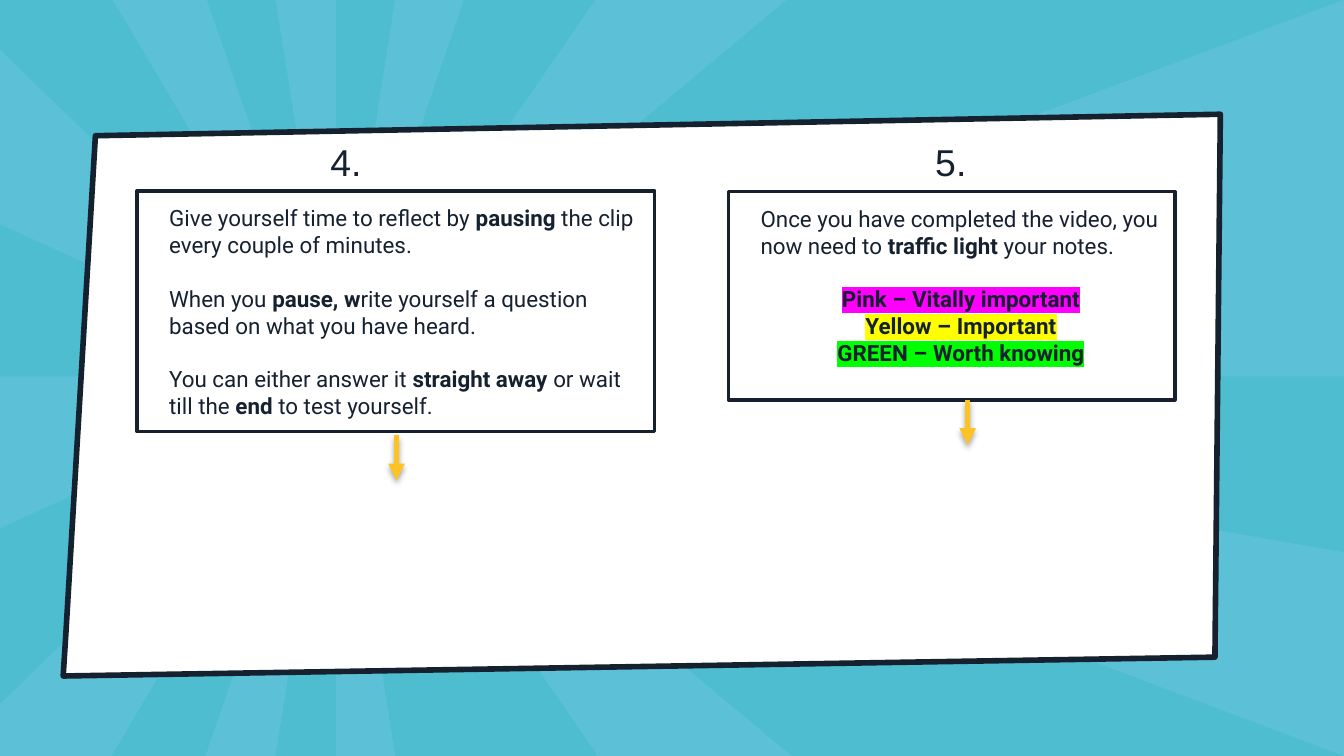
from lxml import etree
from pptx import Presentation
from pptx.dml.color import RGBColor
from pptx.enum.shapes import MSO_CONNECTOR, MSO_SHAPE
from pptx.enum.text import MSO_ANCHOR, PP_ALIGN
from pptx.oxml import parse_xml
from pptx.oxml.ns import nsdecls, qn
from pptx.util import Inches, Pt

RECTANGLE, STRAIGHT = MSO_SHAPE.RECTANGLE, MSO_CONNECTOR.STRAIGHT
LEFT, CENTER, TOP = PP_ALIGN.LEFT, PP_ALIGN.CENTER, MSO_ANCHOR.TOP

THEME = {
    "background": "4EBDCF", "ray": "5CC1D6", "panel": "FFFFFF",
    "ink": "162130", "arrow": "FDC324",
    "pink": "FF00FF", "yellow": "FFFF00", "green": "00FF00",
    "body": {"name": "Roboto", "size": Pt(12)},
    "number": {"name": "Arial", "size": Pt(20)},
    "gap": Pt(14.4), "panel_line": Pt(3), "box_line": Pt(2), "arrow_line": Pt(3),
}

presentation = Presentation()
presentation.slide_width = Inches(10)
presentation.slide_height = presentation.slide_width * 9 // 16
slide = presentation.slides.add_slide(presentation.slide_layouts[6])
slide.background.fill.solid()
slide.background.fill.fore_color.rgb = RGBColor.from_string(THEME["background"])

column = presentation.slide_width / 100
BOTTOM = presentation.slide_height / column
HUB = (25, 28)


def add_outline(points, color):
    corners = [(round(x * column), round(y * column)) for x, y in points]
    builder = slide.shapes.build_freeform(*corners[0], scale=1)
    builder.add_line_segments(corners[1:], close=True)
    shape = builder.convert_to_shape()
    shape.shadow.inherit = False
    shape.fill.solid()
    shape.fill.fore_color.rgb = RGBColor.from_string(color)
    shape.line.fill.background()
    return shape


def write_text(shape, paragraphs, style):
    frame = shape.text_frame
    frame_format = {"word_wrap": True, "vertical_anchor": TOP}
    for side in ("left", "right", "top", "bottom"):
        frame_format[f"margin_{side}"] = round(column)
    for name, value in frame_format.items():
        setattr(frame, name, value)
    for index, (text, align, gap, highlight) in enumerate(paragraphs):
        paragraph = frame.add_paragraph() if index else frame.paragraphs[0]
        paragraph.alignment = align
        paragraph.space_before = gap
        paragraph._p.get_or_add_pPr().set("marL", str(round(1.4 * column)))
        for part, words in enumerate(text.split("**")):
            if not words:
                continue
            run = paragraph.add_run()
            run.text = words
            for name, value in {**style, "bold": part % 2 == 1}.items():
                setattr(run.font, name, value)
            run.font.color.rgb = RGBColor.from_string(THEME["ink"])
            if highlight:
                run._r.rPr.find(qn("a:solidFill")).addnext(parse_xml(
                    f'<a:highlight {nsdecls("a")}><a:srgbClr val="{THEME[highlight]}"/></a:highlight>'))


rays = [
    [(0, 39.3), (0, 28)],
    [(0, 3.7), (0, 16.7)],
    [(8.4, 0), (15.4, 0)],
    [(20.5, 0), (25, 0)],
    [(29.4, 0), (34.5, 0)],
    [(44.3, 0), (58.5, 0)],
    [(100, 0), (100, 28)],
    [(100, 41.1), (100, BOTTOM)],
    [(58.9, BOTTOM), (44.5, BOTTOM)],
    [(29.4, BOTTOM), (25, BOTTOM)],
    [(20.5, BOTTOM), (15.3, BOTTOM)],
    [(8.3, BOTTOM), (0, BOTTOM), (0, 52.4)],
]
for edge in rays:
    add_outline([HUB, *edge], THEME["ray"])

panel = add_outline([(7.1, 10.1), (90.8, 8.5), (90.4, 48.9), (4.7, 50.3), (4.9, 47.2)],
                    THEME["panel"])

gap = THEME["gap"]
steps = [
    ("4.", (10.2, 14.2, 38.5, 17.9), 22.2, (29.5, 32.4), [
        ("Give yourself time to reflect by **pausing** the clip every couple of minutes.",
         LEFT, None, None),
        ("When you **pause, w**rite yourself a question based on what you have heard.",
         LEFT, gap, None),
        ("You can either answer it **straight away **or wait till the **end** to test yourself.",
         LEFT, gap, None),
    ]),
    ("5.", (54.2, 14.25, 33.2, 15.5), 67.2, (72, 29.75), [
        ("Once you have completed the video, you now need to **traffic light **your notes.",
         LEFT, None, None),
        ("**Pink – Vitally important**", CENTER, gap, "pink"),
        ("**Yellow – Important**", CENTER, None, "yellow"),
        ("**GREEN – Worth knowing**", CENTER, None, "green"),
    ]),
]

outlined = [(panel, "panel_line")]
for number, area, number_left, (arrow_x, arrow_y), paragraphs in steps:
    box = slide.shapes.add_shape(RECTANGLE, *(round(value * column) for value in area))
    box.shadow.inherit = False
    box.fill.background()
    outlined.append((box, "box_line"))
    write_text(box, paragraphs, THEME["body"])

    label = slide.shapes.add_textbox(
        *(round(value * column) for value in (number_left, 9.35, 7.2, 4)))
    write_text(label, [(number, LEFT, None, None)], THEME["number"])

    arrow = slide.shapes.add_connector(
        STRAIGHT, *(round(value * column) for value in (arrow_x, arrow_y, arrow_x, arrow_y + 3.35)))
    arrow.line.color.rgb = RGBColor.from_string(THEME["arrow"])
    arrow.line.width = THEME["arrow_line"]
    etree.SubElement(arrow.line._get_or_add_ln(), qn("a:tailEnd"), type="triangle")
    arrow._element.spPr.append(parse_xml(
        f'<a:effectLst {nsdecls("a")}><a:outerShdw blurRad="40000" dist="23000" dir="5400000" '
        'rotWithShape="0"><a:srgbClr val="000000"><a:alpha val="35000"/></a:srgbClr>'
        '</a:outerShdw></a:effectLst>'))

for shape, width in outlined:
    shape.line.color.rgb = RGBColor.from_string(THEME["ink"])
    shape.line.width = THEME[width]
    etree.SubElement(shape.line._get_or_add_ln(), qn("a:round"))

presentation.save("out.pptx")
